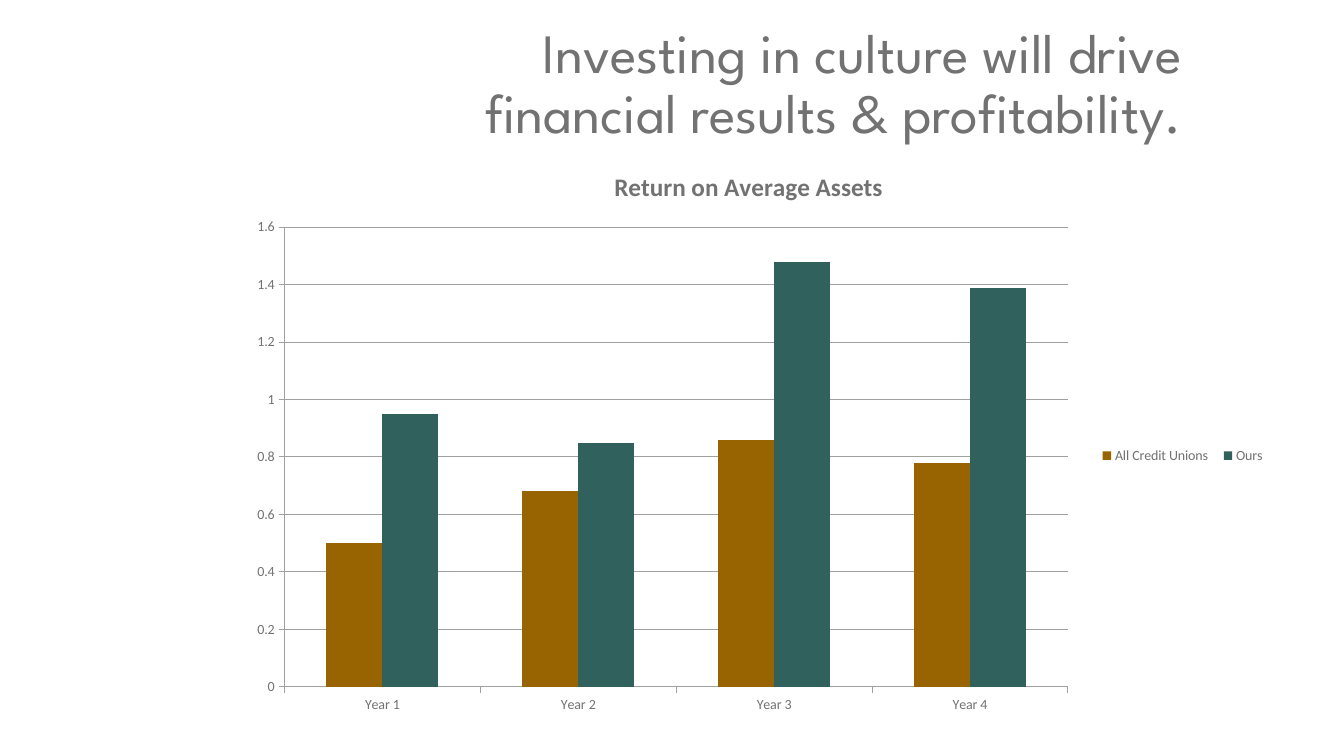
import pptx
import pptx.chart.data
import pptx.dml.color
import pptx.enum.chart
import pptx.enum.text
import pptx.oxml
import pptx.oxml.ns
import pptx.util
from dataclasses import dataclass

Inches = pptx.util.Inches


@dataclass(frozen=True)
class Theme:
    text: str = "727272"
    rule: str = "A0A0A0"
    series: tuple = ("986401", "30615D")
    title_font: str = "League Spartan"
    body_font: str = "Calibri"
    title_size: float = 39.6
    chart_title_size: float = 18
    label_size: float = 10


THEME = Theme()


def rgb(value):
    return pptx.dml.color.RGBColor.from_string(value)


def apply(target, values):
    for name, value in values.items():
        setattr(target, name, value)


def style_font(font, name, size, bold=False):
    apply(font, {"name": name, "size": pptx.util.Pt(size), "bold": bold})
    font.color.rgb = rgb(THEME.text)


def style_line(line):
    line.color.rgb = rgb(THEME.rule)
    line.width = pptx.util.Pt(0.75)


def chart_layout(x, y, w, h, inner=False):
    target = '<c:layoutTarget val="inner"/>' if inner else ""
    sizes = "".join(f'<c:{k} val="{v}"/>' for k, v in zip("xywh", (x, y, w, h)))
    return pptx.oxml.parse_xml(
        f'<c:layout {pptx.oxml.ns.nsdecls("c")}><c:manualLayout>{target}'
        f'<c:xMode val="edge"/><c:yMode val="edge"/>{sizes}'
        "</c:manualLayout></c:layout>"
    )


def add_title(s, text, x, y, w, h):
    sp = s.shapes.title
    apply(sp, {"left": Inches(x), "top": Inches(y),
               "width": Inches(w), "height": Inches(h)})
    tf = sp.text_frame
    apply(tf, {"text": text, "word_wrap": True,
               "auto_size": pptx.enum.text.MSO_AUTO_SIZE.NONE,
               "vertical_anchor": pptx.enum.text.MSO_ANCHOR.MIDDLE})
    p = tf.paragraphs[0]
    apply(p, {"alignment": pptx.enum.text.PP_ALIGN.RIGHT, "line_spacing": 0.9})
    style_font(p.runs[0].font, THEME.title_font, THEME.title_size)


def add_returns_chart(s, x, y, w, h):
    data = pptx.chart.data.CategoryChartData()
    data.categories = [f"Year {n}" for n in range(1, 5)]
    data.add_series("All Credit Unions", (0.5, 0.68, 0.86, 0.78))
    data.add_series("Ours", (0.95, 0.85, 1.48, 1.39))
    chart = s.shapes.add_chart(
        pptx.enum.chart.XL_CHART_TYPE.COLUMN_CLUSTERED,
        Inches(x), Inches(y), Inches(w), Inches(h), data).chart
    style_font(chart.font, THEME.body_font, THEME.label_size)

    chart.has_title = True
    tf = chart.chart_title.text_frame
    tf.text = "Return on Average Assets"
    style_font(tf.paragraphs[0].runs[0].font, THEME.body_font,
               THEME.chart_title_size, True)
    chart.chart_title.include_in_layout = False

    plot = chart.plots[0]
    apply(plot, {"gap_width": 150, "overlap": 0, "vary_by_categories": False})
    for series, color in zip(plot.series, THEME.series):
        series.format.fill.solid()
        series.format.fill.fore_color.rgb = rgb(color)
        series.invert_if_negative = False

    for axis in (chart.category_axis, chart.value_axis):
        axis.major_tick_mark = pptx.enum.chart.XL_TICK_MARK.OUTSIDE
        style_line(axis.format.line)
    apply(chart.value_axis, {"minimum_scale": 0, "maximum_scale": 1.6,
                             "major_unit": 0.2, "has_major_gridlines": True})
    style_line(chart.value_axis.major_gridlines.format.line)
    labels = chart.value_axis.tick_labels
    apply(labels, {"number_format": "General", "number_format_is_linked": False})

    chart.has_legend = True
    legend = chart.legend
    apply(legend, {"position": pptx.enum.chart.XL_LEGEND_POSITION.RIGHT,
                   "include_in_layout": False})
    style_font(legend.font, THEME.body_font, THEME.label_size)
    legend_pos = chart.element.find(".//" + pptx.oxml.ns.qn("c:legendPos"))
    legend_pos.addnext(chart_layout(0.82, 0.5, 0.17, 0.05))

    plot_area = chart.element.find(".//" + pptx.oxml.ns.qn("c:plotArea"))
    for old in plot_area.findall(pptx.oxml.ns.qn("c:layout")):
        plot_area.remove(old)
    plot_area.insert(0, chart_layout(0.067, 0.135, 0.731, 0.785, True))


def main():
    prs = pptx.Presentation()
    apply(prs, {"slide_width": Inches(13.33), "slide_height": Inches(7.5)})
    s = prs.slides.add_slide(prs.slide_layouts[5])
    add_title(s, "Investing in culture will drive financial results & profitability.",
              3.5, 0.22, 8.33, 1.25)
    add_returns_chart(s, 2.11, 1.47, 10.63, 5.81)
    prs.save("out.pptx")


if __name__ == "__main__":
    main()
